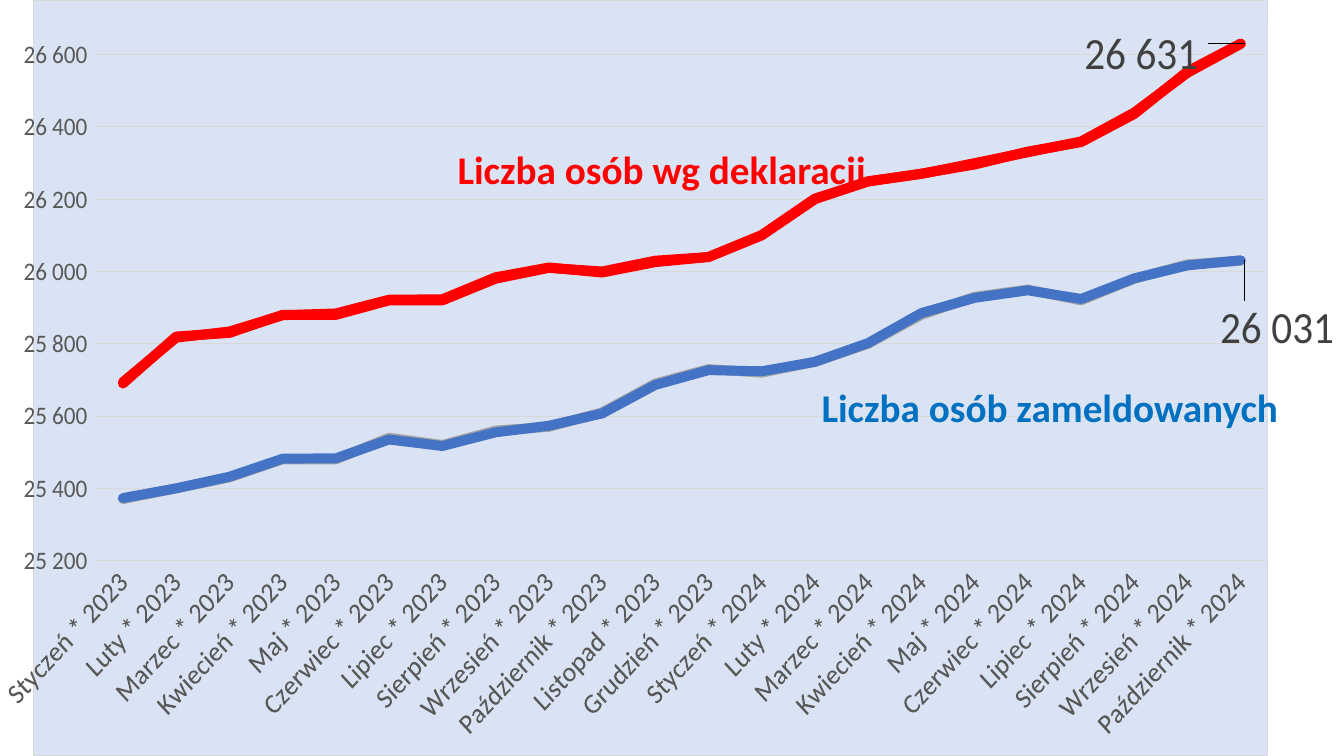
from pptx import Presentation
from pptx.chart.data import CategoryChartData
from pptx.dml.color import RGBColor
from pptx.enum.chart import XL_CHART_TYPE, XL_MARKER_STYLE, XL_TICK_MARK
from pptx.enum.text import MSO_AUTO_SIZE
from pptx.oxml import parse_xml
from pptx.util import Inches, Pt

LINE = XL_CHART_TYPE.LINE_MARKERS
ROUND = XL_MARKER_STYLE.CIRCLE
NONE = XL_TICK_MARK.NONE
GROW = MSO_AUTO_SIZE.SHAPE_TO_FIT_TEXT

FONT = "Calibri"
FORMAT = '_-* #\\ ##0_-;\\-* #\\ ##0_-;_-* "-"??_-;_-'
HEX = {"back": "DAE3F3", "grid": "D9D9D9", "axis": "595959", "label": "404040",
       "black": "000000", "gray": "A5A5A5", "red": "FF0000", "blue": "4472C4",
       "gold": "FFC000", "orange": "ED7D31", "title": "0070C0"}
NS = ('xmlns:c="http://schemas.openxmlformats.org/drawingml/2006/chart" '
      'xmlns:a="http://schemas.openxmlformats.org/drawingml/2006/main"')

MONTHS = ["Styczeń", "Luty", "Marzec", "Kwiecień", "Maj", "Czerwiec", "Lipiec",
          "Sierpień", "Wrzesień", "Październik", "Listopad", "Grudzień"]
CATS = [f"{month} * 2023" for month in MONTHS]
CATS += [f"{month} * 2024" for month in MONTHS[:10]]
LIVING = [25373, 25400, 25432, 25482, 25483, 25535, 25517, 25555, 25573, 25607, 25686,
          25727, 25724, 25750, 25802, 25885, 25927, 25948, 25924, 25981, 26017, 26031]
FILED = [25694, 25817, 25834, 25879, 25884, 25922, 25923, 25984, 26011, 25997, 26026,
         26040, 26101, 26202, 26249, 26271, 26296, 26332, 26358, 26436, 26554, 26631]
SERIES = [([round(n, -1) for n in LIVING], "gray", "gray", None),
          ([round(n, -1) for n in FILED], "red", "gold", None),
          (LIVING, "blue", "blue", (-0.03, 0.09)),
          (FILED, "red", "orange", (-0.14, 0.014))]


class Deck:
    """Holds the slide and draws its styled chart and captions."""

    def __init__(self):
        self.file = Presentation()
        self.file.slide_width = Inches(13.33)
        self.file.slide_height = Inches(7.5)
        self.slide = self.file.slides.add_slide(self.file.slide_layouts[6])

    def color(self, name):
        return RGBColor.from_string(HEX[name])

    def font(self, font, size, name, bold=False):
        font.name, font.size, font.bold = FONT, Pt(size), bold
        font.color.rgb = self.color(name)

    def stroke(self, line, name, width):
        line.color.rgb = self.color(name)
        line.width = Pt(width)

    def panel(self, edge):
        line = f'<a:solidFill><a:srgbClr val="{HEX["grid"]}"/></a:solidFill>' if edge else "<a:noFill/>"
        return parse_xml(
            f'<c:spPr {NS}><a:solidFill><a:srgbClr val="{HEX["back"]}"/></a:solidFill>'
            f'<a:ln w="9525">{line}</a:ln></c:spPr>')

    def layout(self, tags):
        body = "".join(f'<c:{tag} val="{val}"/>' for tag, val in tags)
        return parse_xml(f"<c:layout {NS}><c:manualLayout>{body}</c:manualLayout></c:layout>")

    def chart(self):
        data = CategoryChartData(number_format=FORMAT)
        data.categories = CATS
        for i, (vals, *_) in enumerate(SERIES, 1):
            data.add_series(f"Series {i}", vals)
        chart = self.slide.shapes.add_chart(
            LINE, 0, 0, Inches(13.33), Inches(7.5), data).chart
        chart.has_legend = chart.has_title = False
        self.font(chart.font, 10, "black")
        chart.plots[0].vary_by_categories = False
        root = chart.element.find("{*}chart")
        root.addnext(self.panel(True))
        area = root.find("{*}plotArea")
        for old in area.findall("{*}layout"):
            area.remove(old)
        area.insert(0, self.layout([
            ("layoutTarget", "inner"), ("xMode", "edge"), ("yMode", "edge"),
            ("x", 0.079), ("y", 0.024), ("w", 0.949), ("h", 0.718)]))
        area.append(self.panel(False))
        self.axes(chart)
        for item, (_, name, mark, shift) in zip(chart.plots[0].series, SERIES):
            self.series(item, name, mark)
            if shift:
                self.label(item, shift)

    def axes(self, chart):
        cat, val = chart.category_axis, chart.value_axis
        for axis, size in ((cat, 20), (val, 18)):
            axis.major_tick_mark = axis.minor_tick_mark = NONE
            self.font(axis.tick_labels.font, size, "axis")
        self.stroke(cat.format.line, "grid", 0.75)
        cat.has_major_gridlines = False
        turn = cat._element.find("{*}txPr/{*}bodyPr")
        turn.set("rot", "-2700000")
        turn.set("vert", "horz")
        val.minimum_scale, val.maximum_scale, val.major_unit = 25200, 26700, 200
        val.tick_labels.number_format = FORMAT
        val.tick_labels.number_format_is_linked = False
        val.format.line.fill.background()
        self.stroke(val.major_gridlines.format.line, "grid", 0.75)

    def series(self, item, name, mark):
        item.smooth = False
        self.stroke(item.format.line, name, 7.75)
        item._element.find("{*}spPr/{*}ln").set("cap", "rnd")
        item.marker.style, item.marker.size = ROUND, 5
        fill = item.marker.format.fill
        fill.solid()
        fill.fore_color.rgb = self.color(mark)
        self.stroke(item.marker.format.line, mark, 0.75)

    def label(self, item, shift):
        self.font(item.points[len(CATS) - 1].data_label.font, 32, "label")
        item.data_labels.show_value = False
        group = item._element.find("{*}dLbls")
        group.find("{*}dLbl").insert(1, self.layout(zip("xy", shift)))
        for old in group.findall("{*}showLeaderLines"):
            group.remove(old)
        group.append(parse_xml(f'<c:showLeaderLines {NS} val="1"/>'))

    def text(self, words, left, top, width, name):
        box = self.slide.shapes.add_textbox(
            Inches(left), Inches(top), Inches(width), Inches(0.57))
        frame = box.text_frame
        frame.word_wrap = True
        frame.auto_size = GROW
        run = frame.paragraphs[0].add_run()
        run.text = words
        self.font(run.font, 28, name, True)


def main():
    deck = Deck()
    deck.chart()
    deck.text("Liczba osób wg deklaracji", 4.44, 1.39, 5.23, "red")
    deck.text("Liczba osób zameldowanych", 8.05, 3.75, 4.96, "title")
    deck.file.save("out.pptx")


if __name__ == "__main__":
    main()
